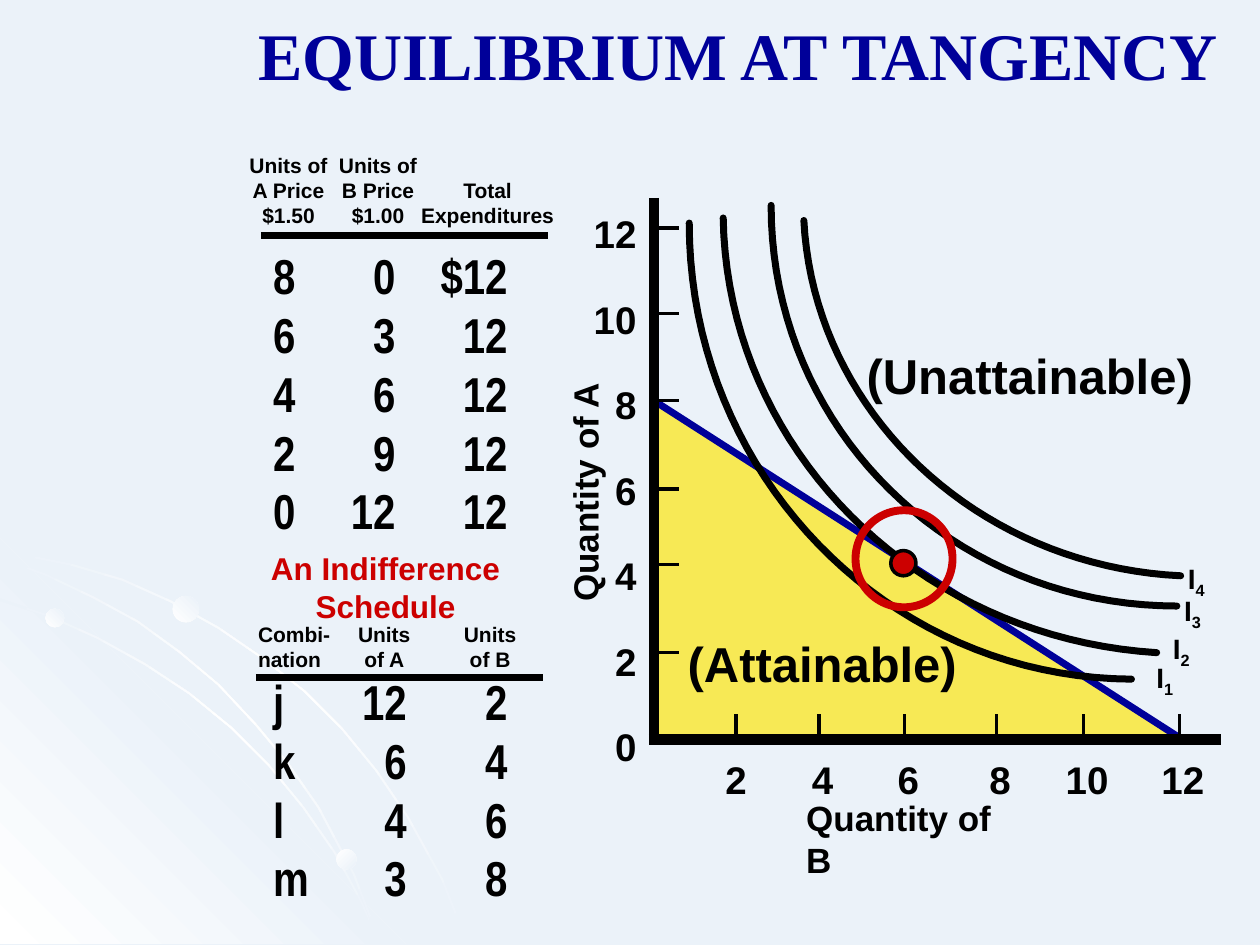
from copy import deepcopy
from dataclasses import dataclass
from typing import Any

from lxml import etree
from pptx import Presentation, util as u
from pptx.dml.color import RGBColor
from pptx.enum import shapes, text
from pptx.oxml.ns import qn

COLORS = {"page": "EBF2F9", "white": "FFFFFF", "ink": "000000",
          "navy": "000099", "red": "CC0000", "yellow": "F7E955"}
COLUMNS = 10
LEFT, CENTER, RIGHT = text.PP_ALIGN.LEFT, text.PP_ALIGN.CENTER, text.PP_ALIGN.RIGHT


def color(name):
    """Return the named colour."""
    return RGBColor.from_string(COLORS[name])


def blend(shape, names, angle):
    """Fill a shape with evenly spaced gradient stops."""
    shape.fill.gradient()
    shape.fill.gradient_angle = -angle % 360
    stops = shape._element.spPr.find(".//" + qn("a:gsLst"))
    while len(stops) < len(names):
        stops.append(deepcopy(stops[0]))
    for index, (stop, name) in enumerate(zip(shape.fill.gradient_stops, names)):
        stop.color.rgb = color(name)
        stop.position = index / (len(names) - 1)


@dataclass
class Box:
    """A region of the page, measured in grid columns and rows."""
    page: Any
    cell: int
    left: float
    top: float

    def x(self, column):
        """Return the page position of a column."""
        return round((self.left + column) * self.cell)

    def y(self, row):
        """Return the page position of a row."""
        return round((self.top + row) * self.cell)

    def frame(self, left, top, width, height):
        """Return a rectangle in page units."""
        return (self.x(left), self.y(top),
                round(width * self.cell), round(height * self.cell))

    def style(self, shape, fill=None, line=None, width=1):
        """Set the fill and outline of a shape."""
        shape.shadow.inherit = False
        if fill:
            shape.fill.solid()
            shape.fill.fore_color.rgb = color(fill)
        else:
            shape.fill.background()
        if line:
            shape.line.color.rgb = color(line)
            shape.line.width = u.Pt(width)
        else:
            shape.line.fill.background()
        return shape

    def label(self, place, lines, size, name="ink", font="Arial", align=LEFT,
              spacing=None, tabs=(), tab_align="r", wrap=False):
        """Add bold text; a line is a string or a (base, subscript) pair."""
        area = self.page.shapes.add_textbox(*self.frame(*place))
        area.text_frame.word_wrap = wrap
        for index, line in enumerate(lines):
            para = area.text_frame.paragraphs[0] if index == 0 else area.text_frame.add_paragraph()
            para.alignment = align
            if spacing:
                para.line_spacing = spacing
            if tabs:
                stops = etree.SubElement(para._p.get_or_add_pPr(), qn("a:tabLst"))
                for tab in tabs:
                    etree.SubElement(stops, qn("a:tab"), pos=str(round(tab * self.cell)),
                                     algn=tab_align)
            parts = (line,) if isinstance(line, str) else line
            for level, part in enumerate(parts):
                span = para.add_run()
                span.text = part
                span.font.name, span.font.size, span.font.bold = font, u.Pt(size), True
                span.font.color.rgb = color(name)
                if level:
                    span.font._element.set("baseline", "-25000")
        return area

    def rule(self, start, end, width, name="ink"):
        """Add a straight line."""
        line = self.page.shapes.add_connector(
            shapes.MSO_CONNECTOR.STRAIGHT, self.x(start[0]), self.y(start[1]),
            self.x(end[0]), self.y(end[1]))
        line.line.color.rgb = color(name)
        line.line.width = u.Pt(width)
        etree.SubElement(line._element.spPr, qn("a:effectLst"))

    def outline(self, points, close=True, **style):
        """Add a freeform through the given points."""
        spots = [(self.x(column), self.y(row)) for column, row in points]
        builder = self.page.shapes.build_freeform(*spots[0])
        builder.add_line_segments(spots[1:], close=close)
        return self.style(builder.convert_to_shape(), **style)

    def disc(self, left, top, size, **style):
        """Add a circle."""
        oval = self.page.shapes.add_shape(
            shapes.MSO_SHAPE.OVAL, *self.frame(left, top, size, size))
        return self.style(oval, **style)


def draw_backdrop(box):
    """Draw the pale arcs, corner glow and dots."""
    arcs = [
        [(0, .38), (.56, .49), (.97, .61), (1.35, .78), (1.73, .99), (2.08, 1.23), (2.41, 1.49),
         (2.71, 1.79), (2.98, 2.12), (3.23, 2.49), (3.5, 2.98), (3.7, 3.49)],
        [(0, .77), (.39, .9), (.77, 1.07), (1.15, 1.28), (1.5, 1.51), (1.83, 1.78),
         (2.13, 2.08), (2.4, 2.41), (2.65, 2.77), (2.85, 3.14), (3.01, 3.49)],
        [(0, .44), (.36, .57), (.74, .75), (1.09, .94), (1.42, 1.18), (1.73, 1.44),
         (2.02, 1.75), (2.27, 2.05), (2.52, 2.41), (2.8, 2.94), (3.01, 3.49)],
    ]
    corner = [(0, .27), (3.22, 3.49), (0, 3.49)]
    for index, arc in enumerate(arcs):
        if index == 1:
            blend(box.outline(corner), ("white", "page", "white"), 315)
        last = len(arc) - 1
        edge = [(column + .02 * step / last, row - .02 * (1 - step / last))
                for step, (column, row) in enumerate(arc)]
        blend(box.outline(arc + edge[::-1]), ("page", "white", "page"), 45)
    for left, top, size, angle in ((.36, .83, .15, 315), (2.67, 2.74, .16, 45),
                                   (1.37, .73, .21, 315)):
        blend(box.disc(left, top, size), ("white", "page"), angle)


def draw_schedule(box, heads, rule, rows, place, tabs):
    """Draw column heads, a rule and rows of figures."""
    for left, top, width, height, align, lines in heads:
        box.label((left, top, width, height), lines, 12, align=align)
    box.label(place, ["\t".join(row) for row in rows], 28, font="Arial Narrow",
              tabs=tabs, wrap=True)
    left, top = rule
    box.rule((left, top), (left + 2.28, top), 4)


def draw_axes(box):
    """Draw both axes with their ticks, numbers and names."""
    box.rule((.19, .57), (.19, 4.91), 6)
    box.rule((.15, 4.87), (4.69, 4.87), 6)
    columns = (.84, 1.5, 2.18, 2.91, 3.6, 4.36)
    for column in columns:
        box.rule((column, 4.67), (column, 4.9), 2)
    for row in (.81, 1.49, 2.18, 2.88, 3.48, 4.18):
        box.rule((.21, row), (.39, row), 2)
    box.label((-.39, .31, .54, 4.84), [str(n) for n in range(12, -1, -2)], 22,
              align=RIGHT, spacing=1.85, wrap=True)
    box.label((.66, 4.95, 4.03, .46), ["\t".join(str(n) for n in range(2, 13, 2))], 22,
              tabs=[column - .73 for column in columns[1:]], tab_align="ctr", wrap=True)
    box.label((-1.33, 2.69, 1.94, .43), ["Quantity of A"], 20).rotation = 270
    box.label((1.3, 5.27, 1.8, .76), ["Quantity of B"], 20, wrap=True)


def draw_curve(box, number, label, controls, steps=40):
    """Draw one indifference curve as a cubic Bezier with its label."""
    points = []
    for step in range(steps + 1):
        t = step / steps
        weights = ((1 - t) ** 3, 3 * t * (1 - t) ** 2, 3 * t * t * (1 - t), t ** 3)
        points.append([sum(w * p[axis] for w, p in zip(weights, controls)) for axis in (0, 1)])
    curve = box.outline(points, close=False, line="ink", width=4)
    curve.line._get_or_add_ln().set("cap", "rnd")
    box.label((*label, .35, .36), [("I", str(number))], 16)


def draw_chart(box):
    """Draw the budget area, indifference curves and tangency point."""
    box.outline([(.17, 4.88), (4.37, 4.88), (.17, 2.17)], fill="yellow", line="ink")
    box.rule((.19, 2.18), (4.37, 4.86), 4, "navy")
    draw_axes(box)
    curves = [
        ((4.08, 4.19), [(3.98, 4.39), (2.04, 4.38), (.47, 2.76), (.47, .77)]),
        ((4.21, 3.96), [(4.18, 4.18), (2.27, 4.06), (.77, 2.56), (.74, .73)]),
        ((4.3, 3.66), [(4.34, 3.81), (2.56, 3.81), (1.12, 2.41), (1.12, .63)]),
        ((4.33, 3.41), [(4.37, 3.57), (2.75, 3.49), (1.46, 2.27), (1.38, .75)]),
    ]
    for number, (label, controls) in enumerate(curves, 1):
        draw_curve(box, number, label, controls)
    box.disc(2.07, 3.37, .2, fill="red", line="ink", width=2)
    box.label((.36, 3.98, 2.34, .56), ["(Attainable)"], 28)
    box.label((1.78, 1.69, 2.8, .56), ["(Unattainable)"], 28)
    box.disc(1.79, 3.05, .77, line="red", width=4.5)


def main():
    """Build and save the slide."""
    deck = Presentation()
    deck.slide_width, deck.slide_height = u.Inches(10), u.Inches(7.5)
    page = deck.slides.add_slide(deck.slide_layouts[6])
    page.background.fill.solid()
    page.background.fill.fore_color.rgb = color("page")
    cell = deck.slide_width // COLUMNS
    draw_backdrop(Box(page, cell, 0, 4))
    Box(page, cell, 0, 0).label((1.95, .06, 7.95, .73), ["EQUILIBRIUM AT TANGENCY"], 38,
                                "navy", "Times New Roman")
    draw_chart(Box(page, cell, 5, 1))
    draw_schedule(
        Box(page, cell, 2, 1),
        [(-.12, .16, .82, .7, CENTER, ["Units of", "A Price", "$1.50"]),
         (.59, .16, .82, .7, CENTER, ["Units of", "B Price", "$1.00"]),
         (1.17, .36, 1.4, .5, CENTER, ["Total", "Expenditures"])],
        (.07, .87),
        [("8", "0", "$12"), ("6", "3", "12"), ("4", "6", "12"), ("2", "9", "12"),
         ("0", "12", "12")],
        (.07, .9, 2.2, 2.43), (.97, 1.86))
    lower = Box(page, cell, 2, 4)
    lower.label((.05, .31, 2.02, .7), ["An Indifference", "Schedule"], 18, "red", align=CENTER)
    draw_schedule(
        lower,
        [(-.05, .88, .9, .5, LEFT, ["Combi-", "nation"]),
         (.65, .88, .8, .5, CENTER, ["Units", "of A"]),
         (1.49, .88, .8, .5, CENTER, ["Units", "of B"])],
        (.03, 1.38),
        [("j", "12", "2"), ("k", "6", "4"), ("l", "4", "6"), ("m", "3", "8")],
        (.07, 1.28, 2.2, 1.97), (1.06, 1.86))
    deck.save("out.pptx")


if __name__ == "__main__":
    main()
